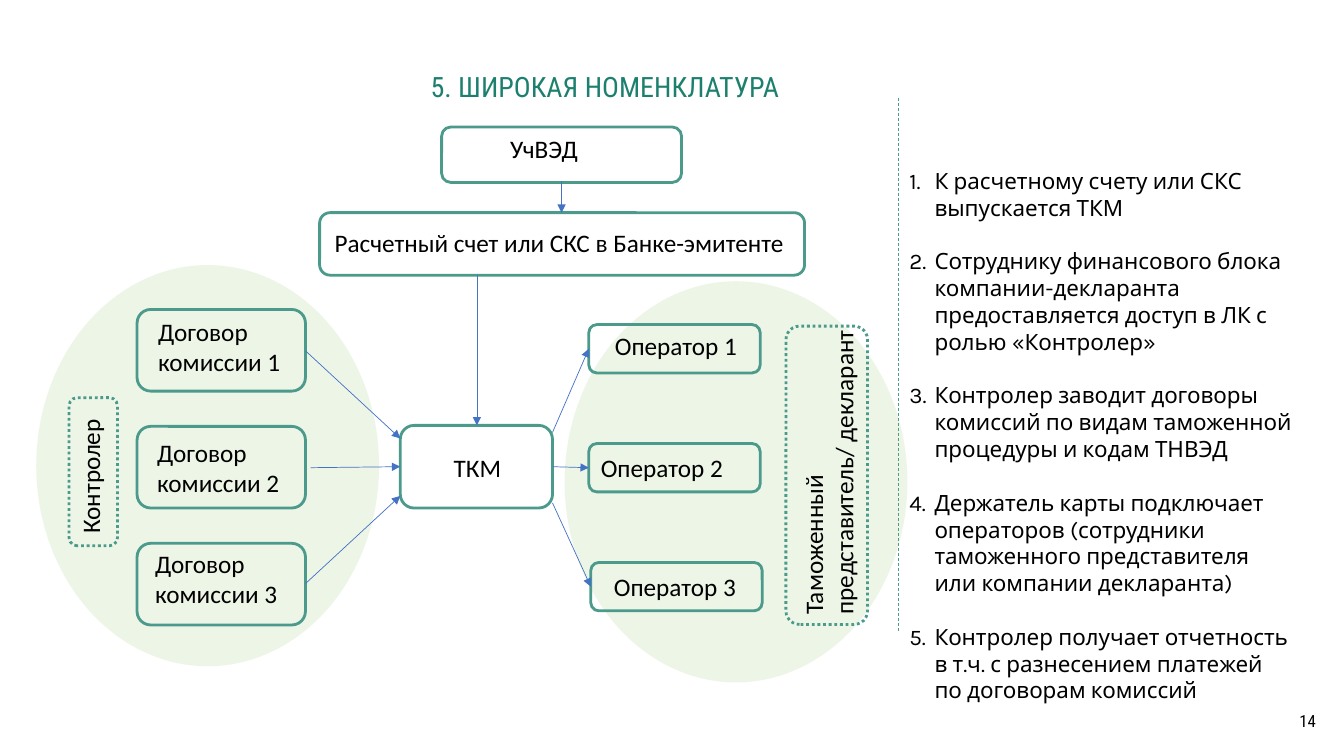
from lxml import etree
from pptx import Presentation
from pptx.dml.color import RGBColor
from pptx.enum.dml import MSO_LINE
from pptx.enum.shapes import MSO_CONNECTOR, MSO_SHAPE
from pptx.enum.text import MSO_ANCHOR, PP_ALIGN
from pptx.oxml.ns import qn
from pptx.util import Inches, Pt

STRAIGHT = MSO_CONNECTOR.STRAIGHT
OVAL, ROUNDED = MSO_SHAPE.OVAL, MSO_SHAPE.ROUNDED_RECTANGLE
DASH, DOTS = MSO_LINE.DASH, MSO_LINE.ROUND_DOT
TOP, MIDDLE = MSO_ANCHOR.TOP, MSO_ANCHOR.MIDDLE
LEFT, RIGHT = PP_ALIGN.LEFT, PP_ALIGN.RIGHT

COLORS = {"title": "1D806E", "frame": "4B9A8C", "arrow": "4472C4",
          "zone": "E2F0D9", "text": "000000"}
BODY_FONT, HEAD_FONT, LIST_FONT = "Calibri", "Roboto Condensed", "Karla"
ROUNDED_TEXT_INSET = 0.05  # share of the short side kept clear by the corners

TITLE = "5. ШИРОКАЯ НОМЕНКЛАТУРА"
PAGE_NUMBER = "14"
STEPS = [
    "К расчетному счету или СКС выпускается ТКМ",
    "Сотруднику финансового блока компании-декларанта предоставляется "
    "доступ в ЛК с ролью «Контролер»",
    "Контролер заводит договоры комиссий по видам таможенной процедуры "
    "и кодам ТНВЭД",
    "Держатель карты подключает операторов (сотрудники таможенного "
    "представителя или компании декларанта)",
    "Контролер получает отчетность в т.ч. с разнесением платежей "
    "по договорам комиссий",
]
ZONES = [(5.6, 2.79), (0.36, 2.63)]
ZONE_SIZE = (3.4, 3.98)

CONTRACT_SIZE, OPERATOR_SIZE = (1.67, 0.81), (1.7, 0.48)
# lines, (left, top), (width, height), text offset from the box corner
BOXES = [
    (["УчВЭД"], (4.38, 1.26), (2.38, 0.55), (0.68, 0.06)),
    (["Расчетный счет или СКС в Банке-эмитенте"],
     (3.17, 2.11), (4.81, 0.62), (0.15, 0.15)),
    (["ТКМ"], (3.97, 4.22), (1.51, 0.82), (0.53, 0.27)),
    (["Договор комиссии 1"], (1.36, 3.07), CONTRACT_SIZE, (0.21, 0.07)),
    (["Договор комиссии 2"], (1.36, 4.23), CONTRACT_SIZE, (0.2, 0.11)),
    (["Договор комиссии 3"], (1.36, 5.39), CONTRACT_SIZE, (0.18, 0.05)),
    (["Оператор 1"], (5.84, 3.22), OPERATOR_SIZE, (0.26, 0.06)),
    (["Оператор 2"], (5.84, 4.4), OPERATOR_SIZE, (0.12, 0.09)),
    (["Оператор 3"], (5.86, 5.58), OPERATOR_SIZE, (0.23, 0.09)),
]
ROLES = [
    (["Контролер"], (0.19, 4.44), (1.47, 0.48), (0.12, 0.06)),
    (["Таможенный", "представитель/ декларант"],
     (6.72, 4.31), (2.96, 0.81), (0.1, 0.12)),
]
ARROWS = [
    ((5.57, 1.8), (5.57, 2.11)), ((4.73, 2.73), (4.73, 4.22)),
    ((3.03, 3.48), (3.97, 4.35)), ((3.08, 4.64), (3.97, 4.63)),
    ((3.03, 5.79), (3.97, 4.92)), ((5.48, 4.29), (5.84, 3.46)),
    ((5.48, 4.63), (5.84, 4.64)), ((5.48, 4.99), (5.86, 5.82)),
]
DIVIDER = ((8.91, 0.97), (8.91, 6.27))


def color(name):
    return RGBColor.from_string(COLORS[name])


def style(paragraph, font_name, size, color_name="text", align=LEFT):
    paragraph.alignment = align
    paragraph.font.name = font_name
    paragraph.font.size = Pt(size)
    paragraph.font.color.rgb = color(color_name)


def set_frame(frame, anchor, left=0.1, top=0.05, right=0.1, bottom=0.05):
    frame.word_wrap = True
    frame.vertical_anchor = anchor
    frame.margin_left, frame.margin_top = Inches(left), Inches(top)
    frame.margin_right, frame.margin_bottom = Inches(right), Inches(bottom)


def paragraphs_for(frame, lines):
    """Write one paragraph per line and return them."""
    frame.text = "\n".join(lines)
    return frame.paragraphs


def add_zone(slide, corner):
    zone = slide.shapes.add_shape(OVAL, *map(Inches, corner + ZONE_SIZE))
    zone.shadow.inherit = False
    zone.fill.solid()
    zone.fill.fore_color.rgb = color("zone")
    zone.line.fill.background()
    tint = next(zone.fill._xPr.iter(qn("a:srgbClr")))
    etree.SubElement(tint, qn("a:alpha"), val="61000")


def add_box(slide, lines, corner, size, offset):
    box = slide.shapes.add_shape(ROUNDED, *map(Inches, corner + size))
    box.shadow.inherit = False
    box.fill.background()
    box.line.color.rgb = color("frame")
    box.line.width = Pt(2)
    left, top = (gap - ROUNDED_TEXT_INSET * min(size) for gap in offset)
    # the negative right margin keeps the longest label on one line
    set_frame(box.text_frame, TOP, left, top, -0.1, 0)
    for paragraph in paragraphs_for(box.text_frame, lines):
        style(paragraph, BODY_FONT, 18)
    return box


def add_line(slide, start, end, color_name):
    line = slide.shapes.add_connector(STRAIGHT, *map(Inches, start + end))
    line.line.color.rgb = color(color_name)
    line.line.width = Pt(0.5)
    etree.SubElement(line._element.spPr, qn("a:effectLst"))
    return line


def add_steps(slide):
    box = slide.shapes.add_textbox(*map(Inches, (8.92, 1.61, 4.02, 5.76)))
    set_frame(box.text_frame, TOP)
    for index, paragraph in enumerate(paragraphs_for(box.text_frame, STEPS)):
        properties = paragraph._p.get_or_add_pPr()
        properties.set("marL", str(Inches(0.25)))
        properties.set("indent", str(-Inches(0.25)))
        etree.SubElement(properties, qn("a:buFont"), typeface="+mj-lt")
        etree.SubElement(properties, qn("a:buAutoNum"), type="arabicPeriod")
        style(paragraph, LIST_FONT, 16)
        if index:
            paragraph.space_before = Pt(19)


def main():
    deck = Presentation()
    deck.slide_width, deck.slide_height = Inches(13.33), Inches(7.5)
    slide = deck.slides.add_slide(deck.slide_layouts.get_by_name("Title Only"))

    title = slide.shapes.title
    title.left, title.top = Inches(4.27), Inches(0.48)
    title.width, title.height = Inches(8.88), Inches(0.79)
    set_frame(title.text_frame, MIDDLE, 0, 0, 0, 0)
    heading = paragraphs_for(title.text_frame, [TITLE])[0]
    style(heading, HEAD_FONT, 20, "title")
    heading.line_spacing = 0.9

    for corner in ZONES:
        add_zone(slide, corner)
    for box in BOXES:
        add_box(slide, *box)
    for role in ROLES:
        frame = add_box(slide, *role)
        frame.rotation = 270
        frame.line.dash_style = DOTS

    for start, end in ARROWS:
        arrow = add_line(slide, start, end, "arrow")
        etree.SubElement(arrow.line._ln, qn("a:tailEnd"), type="triangle")
    add_line(slide, *DIVIDER, "frame").line.dash_style = DASH

    add_steps(slide)

    number = slide.shapes.add_textbox(*map(Inches, (10.15, 6.95, 3, 0.4)))
    set_frame(number.text_frame, MIDDLE)
    style(paragraphs_for(number.text_frame, [PAGE_NUMBER])[0],
          HEAD_FONT, 12, align=RIGHT)

    deck.save("out.pptx")


if __name__ == "__main__":
    main()
